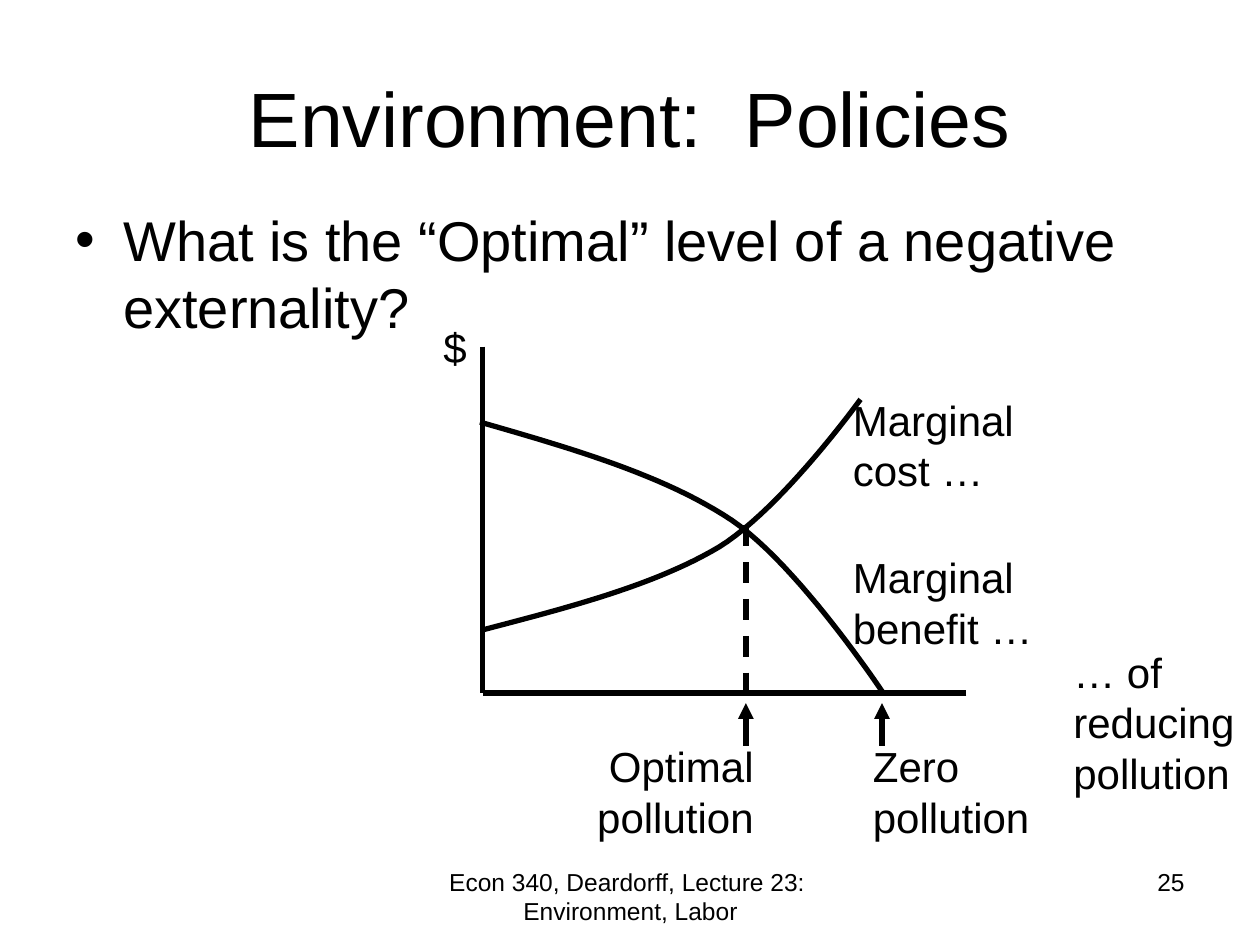
from dataclasses import dataclass

from lxml.etree import SubElement
from pptx import Presentation
from pptx.dml.color import RGBColor as Rgb
from pptx.enum.dml import MSO_LINE as Dash
from pptx.enum.shapes import MSO_CONNECTOR as Link
from pptx.enum.text import MSO_ANCHOR as Anchor, MSO_AUTO_SIZE as Fit, PP_ALIGN as Align
from pptx.oxml.ns import qn
from pptx.util import Emu, Pt

PX = 9144  # 100 px to the inch


@dataclass(frozen=True)
class Theme:
    font: str = "Arial"
    ink: Rgb = Rgb(0, 0, 0)
    title: int = 44
    body: int = 32
    label: int = 24
    foot: int = 14
    line: int = 3


theme = Theme()


def px(n):
    return Emu(round(n * PX))


def write(shape, text, size, align=Align.LEFT):
    frame = shape.text_frame
    frame.word_wrap = True
    para = frame.paragraphs[0]
    para.alignment = align
    run = para.add_run()
    run.text = text
    font = run.font
    font.name, font.size = theme.font, Pt(size)
    font.color.rgb = theme.ink
    return para


def add_text(slide, box, text, size, align=Align.LEFT):
    shape = slide.shapes.add_textbox(*map(px, box))
    return write(shape, text, size, align)


def pen(line):
    line.color.rgb = theme.ink
    line.width = Pt(theme.line)


def add_line(slide, start, end, dash=False, arrow=False):
    link = slide.shapes.add_connector(Link.STRAIGHT, *map(px, start + end))
    pen(link.line)
    if dash:
        link.line.dash_style = Dash.DASH
    props = link._element.spPr
    if arrow:
        SubElement(props.find(qn("a:ln")), qn("a:headEnd"), type="triangle")
    SubElement(props, qn("a:effectLst"))


def bezier(ends, steps=24):
    for i in range(1, steps + 1):
        t = i / steps
        u = 1 - t
        parts = (u**3, 3 * u * u * t, 3 * u * t * t, t**3)
        yield tuple(sum(w * p[k] for w, p in zip(parts, ends)) for k in (0, 1))


def add_curve(slide, knots):
    """Draw joined cubic arcs: each arc takes three more knots."""
    dots = [dot for i in range(0, len(knots) - 1, 3) for dot in bezier(knots[i:i + 4])]
    form = slide.shapes.build_freeform(*map(px, knots[0]))
    form.add_line_segments([(px(x), px(y)) for x, y in dots], close=False)
    curve = form.convert_to_shape()
    curve.fill.background()
    curve.shadow.inherit = False
    pen(curve.line)


def add_title(slide, box, text):
    title = slide.shapes.title
    title.left, title.top, title.width, title.height = map(px, box)
    write(title, text, theme.title, Align.CENTER)
    title.text_frame.vertical_anchor = Anchor.MIDDLE
    title.text_frame.auto_size = Fit.NONE


def add_bullet(slide, box, text):
    para = add_text(slide, box, text, theme.body)
    para.space_before = Pt(theme.body * 0.2)
    props = para._p.get_or_add_pPr()
    props.set("marL", str(px(38)))
    props.set("indent", str(px(-38)))
    SubElement(props, qn("a:buFont"), typeface=theme.font)
    SubElement(props, qn("a:buChar"), char="•")


def add_graph(slide, box):
    left, top, wide, high = box
    best, zero = 209, 317  # pollution levels along the axis

    def at(x, y):
        return left + x, top + y

    # Axes
    add_line(slide, at(0, 0), at(0, high))
    add_line(slide, at(wide, high), at(0, high))

    # Marginal benefit, then marginal cost
    curves = (
        ((-2, 60), (71, 81), (144, 102), (198, 138), (251, 174), (318, 275), (318, 275)),
        ((0, 225), (69, 207), (138, 189), (188, 159), (238, 128), (300, 42), (300, 42)),
    )
    for knots in curves:
        add_curve(slide, [at(*knot) for knot in knots])

    # Optimum and pointers below the axis
    add_line(slide, at(best, 142), at(best, high), dash=True)
    for x in (best, zero):
        add_line(slide, at(x, high + 8), at(x, high + 42), arrow=True)

    # Labels
    labels = (
        (-41, -25, 117, 50, "$", Align.LEFT),
        (300, 308, 200, 91, "Zero pollution", Align.LEFT),
        (25, 308, 200, 91, "Optimal pollution", Align.RIGHT),
        (284, 158, 200, 91, "Marginal benefit …", Align.LEFT),
        (284, 33, 200, 91, "Marginal cost …", Align.LEFT),
        (459, 233, 158, 131, "… of reducing pollution", Align.LEFT),
    )
    for x, y, w, h, text, align in labels:
        add_text(slide, at(x, y) + (w, h), text, theme.label, align)


def add_foot(slide, box):
    left, top, wide, high = box
    add_text(slide, (left, top, 317, high),
             "Econ 340, Deardorff, Lecture 23:  Environment, Labor",
             theme.foot, Align.CENTER)
    add_text(slide, (left + wide - 233, top, 233, high), "25", theme.foot, Align.RIGHT)


def main():
    deck = Presentation()
    deck.slide_width, deck.slide_height = px(1000), px(750)
    slide = deck.slides.add_slide(deck.slide_layouts[5])
    add_title(slide, (50, 30, 900, 125), "Environment:  Policies")
    add_bullet(slide, (50, 158, 900, 517),
               "What is the “Optimal” level of a negative externality?")
    add_graph(slide, (383, 275, 384, 275))
    add_foot(slide, (342, 683, 608, 52))
    deck.save("out.pptx")


if __name__ == "__main__":
    main()
